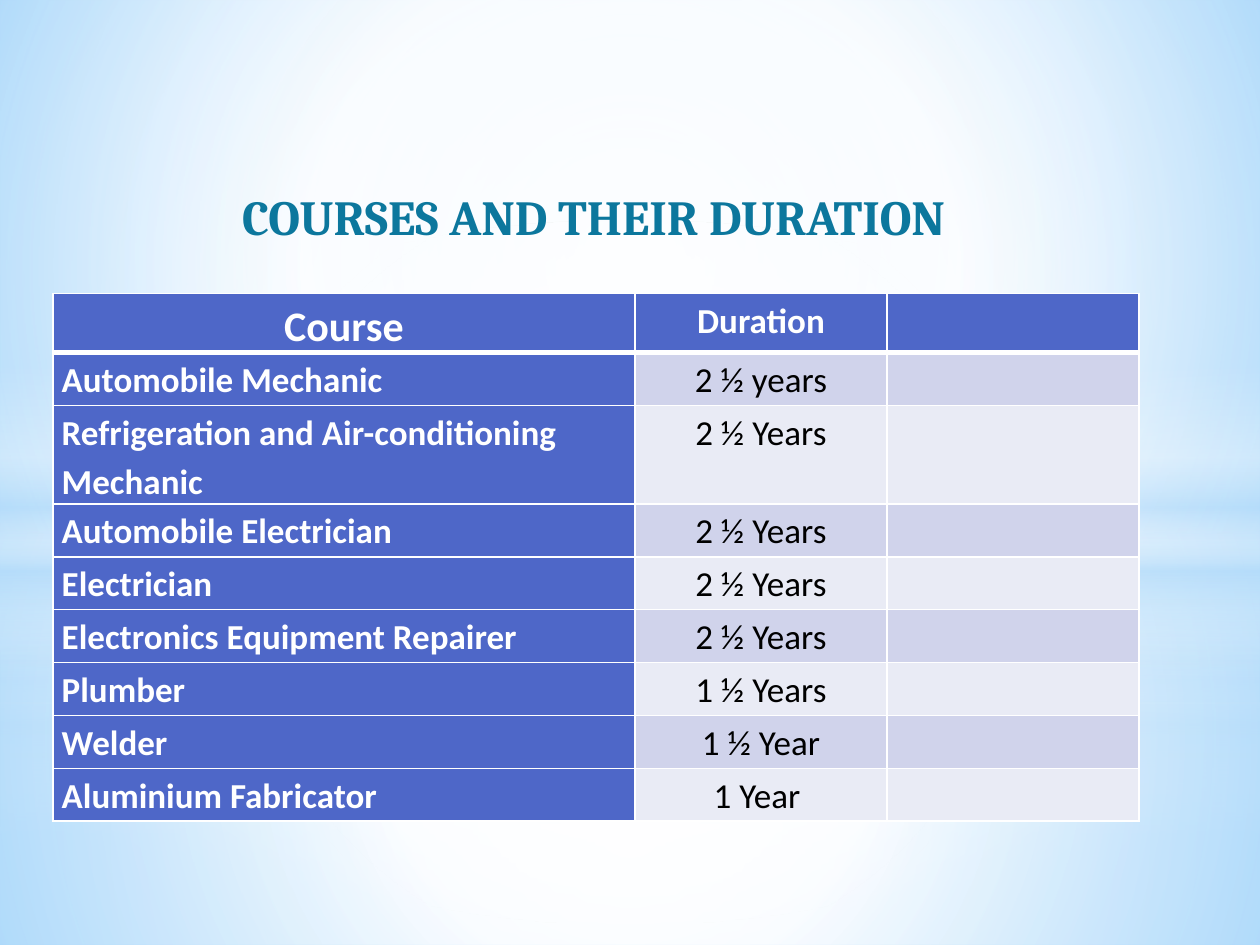
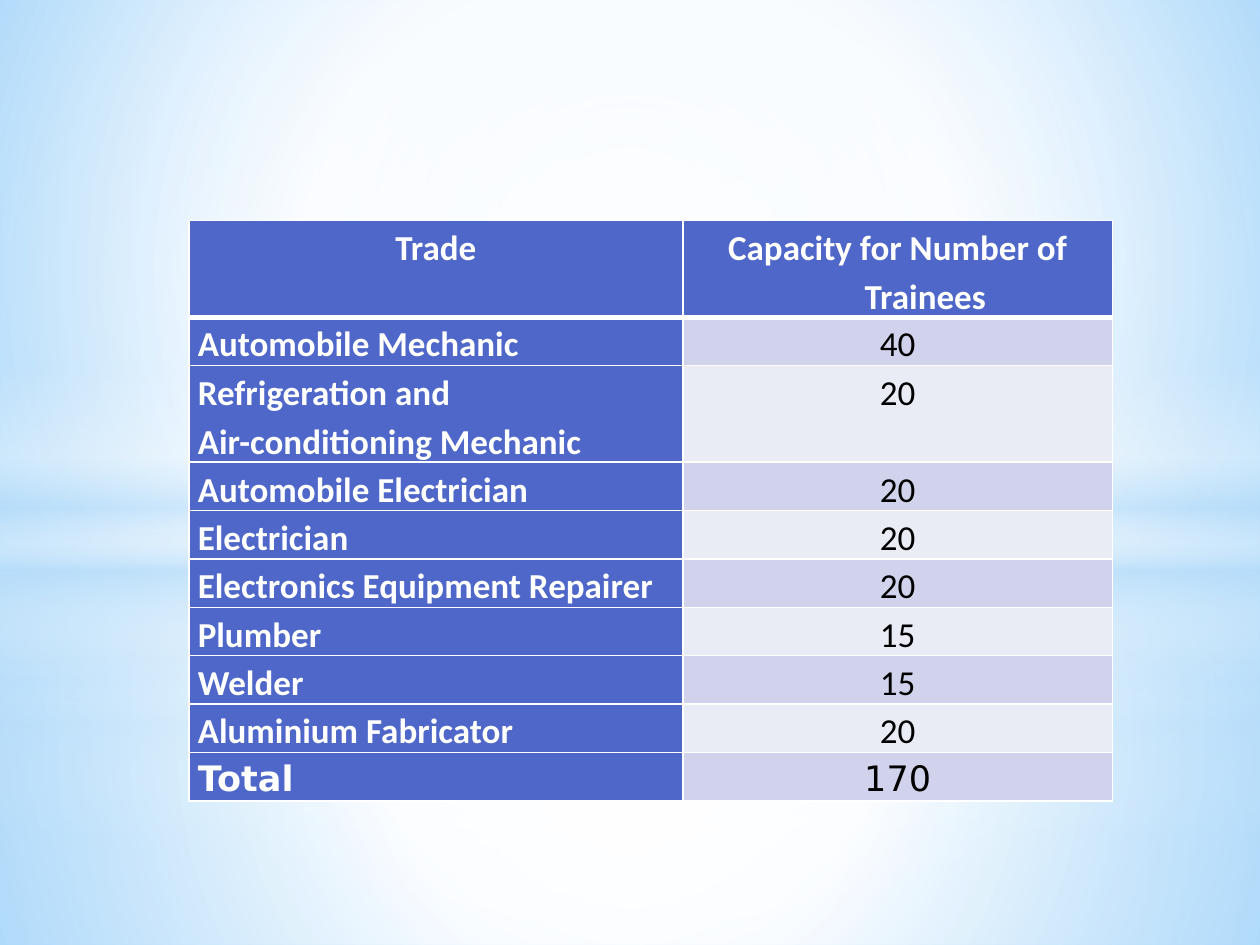
from dataclasses import dataclass
from pptx import Presentation
from pptx.dml.color import RGBColor
from pptx.enum.shapes import MSO_SHAPE
from pptx.enum.text import MSO_ANCHOR, PP_ALIGN
from pptx.oxml import parse_xml
from pptx.oxml.ns import nsdecls, qn
from pptx.util import Inches, Pt


@dataclass(frozen=True)
class Theme:
    white: str = "FFFFFF"
    black: str = "000000"
    sky: str = "B4DCFA"
    near: str = "9ED5FF"
    far: str = "5BB9FF"
    teal: str = "0C779D"
    blue: str = "4E67C8"
    bands: tuple = ("E9EBF5", "D0D3EB")
    body: str = "Calibri"
    head: str = "Cambria"
    plain: str = "DejaVu Sans"
    title: int = 28
    large: int = 24
    text: int = 20


THEME = Theme()
CENTER = (50, 50, 50, 50)


def grad_xml(stops, rect=None):
    """Radial gradient around rect, or a vertical one without it.

    Each stop is (position, colour, opacity), in percent."""
    marks = "".join(
        f'<a:gs pos="{pos * 1000}"><a:srgbClr val="{tone}">'
        f'<a:alpha val="{alpha * 1000}"/></a:srgbClr></a:gs>'
        for pos, tone, alpha in stops)
    if rect:
        sides = " ".join(f'{k}="{v * 1000}"' for k, v in zip("ltrb", rect))
        way = f'<a:path path="circle"><a:fillToRect {sides}/></a:path>'
    else:
        way = '<a:lin ang="5400000" scaled="0"/>'
    return parse_xml(f'<a:gradFill {nsdecls("a")} rotWithShape="1">'
                     f'<a:gsLst>{marks}</a:gsLst>{way}</a:gradFill>')


def set_grad(fill, host, stops, rect=None):
    fill.solid()
    host.replace(host.find(qn("a:solidFill")), grad_xml(stops, rect))


class Deck:
    def __init__(self, theme):
        self.theme = theme
        self.prs = Presentation()
        self.prs.slide_width, self.prs.slide_height = Inches(10), Inches(7.5)
        self.slide = None

    def new(self):
        self.slide = self.prs.slides.add_slide(self.prs.slide_layouts[6])
        self.scene()

    def scene(self):
        """Sky background: two layers of haze, wave and glow."""
        t = self.theme
        fill = self.slide.background.fill
        fill.solid()
        host = next(self.slide.element.iter(qn("p:bgPr")))
        set_grad(fill, host, [(0, t.near, 100), (60, t.white, 100),
                              (100, t.far, 100)], (20, 10, 20, 60))
        wave = [(0, t.white, 0), (29, t.white, 30), (45, t.sky, 40),
                (55, t.white, 26), (65, t.sky, 60), (100, t.white, 0)]
        for split, crest, extra, core in ((5.58, 4.12, 0, 56),
                                          (4.23, 2.9, 1, 54)):
            low = [(0, t.white, 91 + extra), (37, t.white, 76 + extra),
                   (100, t.sky, 79 + extra)]
            high = [(0, t.white, 89 + extra), (48, t.white, 62 + extra),
                    (100, t.sky, 79 + extra)]
            glow = [(0, t.white, 100), (core, t.white, 0)]
            self.haze(split, 7.5 - split, low, CENTER)
            self.haze(0, split, high, CENTER)
            self.haze(crest, 2.5, wave)
            self.haze(1.75, 5.58, glow, CENTER, MSO_SHAPE.OVAL)

    def haze(self, top, height, stops, rect=None, kind=MSO_SHAPE.RECTANGLE):
        shape = self.slide.shapes.add_shape(
            kind, 0, Inches(top), self.prs.slide_width, Inches(height))
        shape.shadow.inherit = False
        shape.line.fill.background()
        set_grad(shape.fill, shape._element.spPr, stops, rect)

    def add_text(self, para, text, size, face, tone, bold):
        run = para.add_run()
        run.text = text
        font = run.font
        font.size, font.name, font.bold = Pt(size), face, bold
        font.color.rgb = RGBColor.from_string(tone)

    def title(self, text, left, top, width, height):
        box = self.slide.shapes.add_textbox(
            Inches(left), Inches(top), Inches(width), Inches(height))
        frame = box.text_frame
        frame.word_wrap = True
        frame.vertical_anchor = MSO_ANCHOR.BOTTOM
        para = frame.paragraphs[0]
        para.alignment = PP_ALIGN.CENTER
        t = self.theme
        self.add_text(para, text, t.title, t.head, t.teal, True)

    def table(self, rows, left, top, cols, tall, height, hang=0, odd=None):
        """tall lists the least row heights; odd maps (row, column) to
        the (size, face) of cells that differ."""
        t = self.theme
        frame = self.slide.shapes.add_table(
            len(rows), len(cols), Inches(left), Inches(top),
            Inches(sum(cols)), Inches(height))
        grid = frame.table
        for col, width in zip(grid.columns, cols):
            col.width = Inches(width)
        for row, least in zip(grid.rows, tall):
            row.height = Inches(least)
        frame.height = Inches(height)
        for r, row in enumerate(rows):
            for c, text in enumerate(row):
                cell = grid.cell(r, c)
                key = r == 0 or c == 0
                self.edge(cell, r)
                cell.fill.solid()
                cell.fill.fore_color.rgb = RGBColor.from_string(
                    t.blue if key else t.bands[r % 2])
                if text:
                    size, face = (odd or {}).get((r, c), (t.text, t.body))
                    mid = c > 0 or r == 0
                    self.fill_cell(cell, text, size, face, key, mid, hang)

    def fill_cell(self, cell, text, size, face, key, mid, hang):
        cell.margin_left = cell.margin_right = Inches(0.07)
        cell.margin_top = cell.margin_bottom = 0
        frame = cell.text_frame
        for i, line in enumerate(text.split("\n")):
            para = frame.add_paragraph() if i else frame.paragraphs[0]
            para.alignment = PP_ALIGN.CENTER if mid else PP_ALIGN.LEFT
            para.line_spacing = 1.15
            if hang:
                props = para._p.get_or_add_pPr()
                props.set("marL", str(Inches(hang)))
                props.set("indent", str(-Inches(hang)))
            tone = self.theme.white if key else self.theme.black
            self.add_text(para, line, size, face, tone, key)

    def edge(self, cell, row):
        """White borders, thick between the heading and the first row."""
        props = cell._tc.get_or_add_tcPr()
        thick = {0: "B", 1: "T"}.get(row)
        for side in "LRTB":
            width = Pt(3 if side == thick else 1)
            props.append(parse_xml(
                f'<a:ln{side} {nsdecls("a")} w="{width}"><a:solidFill>'
                f'<a:srgbClr val="{self.theme.white}"/></a:solidFill>'
                f'</a:ln{side}>'))


def main():
    deck = Deck(THEME)
    terms = [
        ("Course", "Duration", ""),
        ("Automobile Mechanic", "2 ½ years", ""),
        ("Refrigeration and Air-conditioning Mechanic", "2 ½ Years", ""),
        ("Automobile Electrician", "2 ½ Years", ""),
        ("Electrician", "2 ½ Years", ""),
        ("Electronics Equipment Repairer", "2 ½ Years", ""),
        ("Plumber", "1 ½ Years", ""),
        ("Welder", "1 ½ Year", ""),
        ("Aluminium Fabricator", "1 Year ", ""),
    ]
    deck.new()
    deck.table(terms, 0.42, 2.33, (4.62, 2, 2), [0.25] + [0.42] * 8, 4.14,
               odd={(0, 0): (THEME.large, THEME.body)})
    deck.title("COURSES AND THEIR DURATION", 0.42, 1.08, 8.58, 0.92)

    seats = [
        ("Trade", "Capacity for Number of Trainees "),
        ("Automobile Mechanic", "40"),
        ("Refrigeration and\nAir-conditioning Mechanic", "20"),
        ("Automobile Electrician", "20"),
        ("Electrician", "20"),
        ("Electronics Equipment Repairer", "20"),
        ("Plumber", "15"),
        ("Welder", "15"),
        ("Aluminium Fabricator", "20"),
        ("Total", "170"),
    ]
    last = len(seats) - 1
    deck.new()
    deck.table(seats, 1.5, 1.75, (3.92, 3.41), [0.3] * len(seats), 4.6, 0.5,
               {(last, c): (THEME.text, THEME.plain) for c in range(2)})
    deck.prs.save("out.pptx")


if __name__ == "__main__":
    main()
